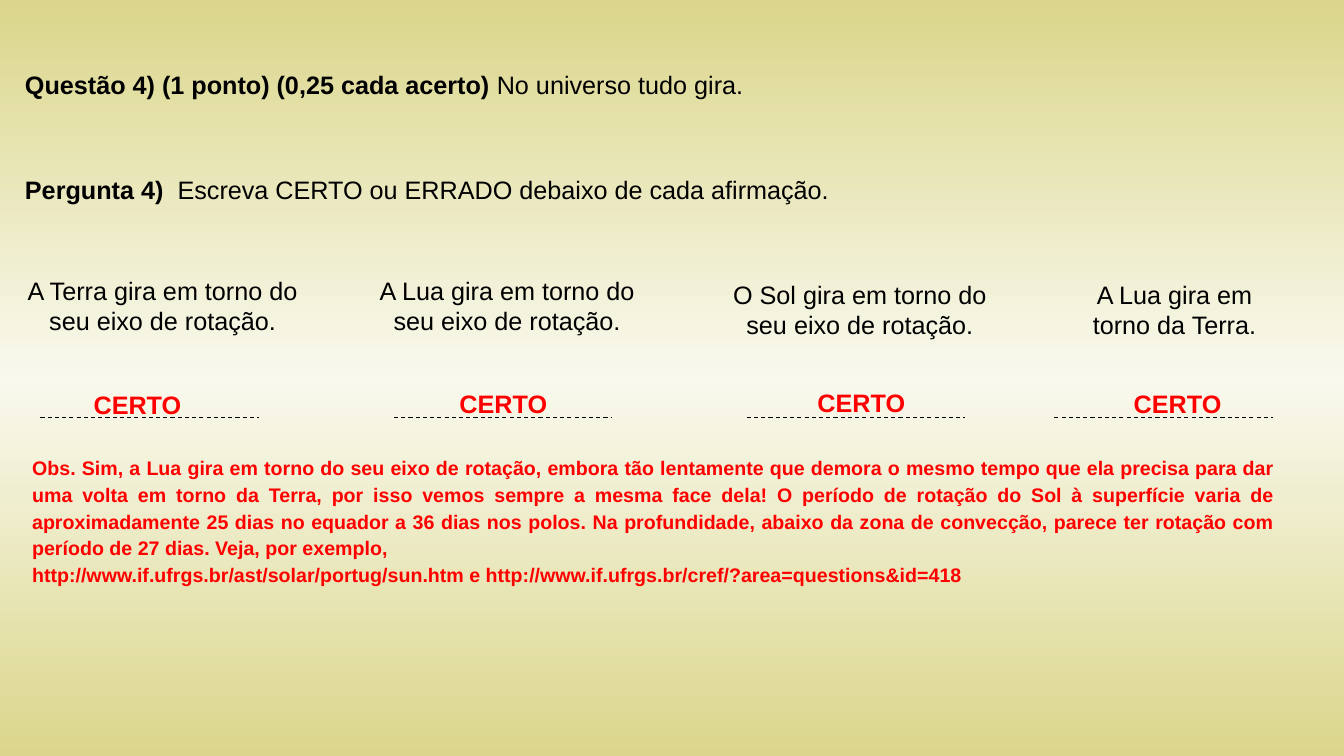
"""Build the answer slide for question 4, on rotation in the universe."""
from copy import deepcopy
from dataclasses import dataclass

from lxml import etree
from pptx import Presentation
from pptx.dml.color import RGBColor
from pptx.enum.dml import MSO_LINE_DASH_STYLE
from pptx.enum.shapes import MSO_CONNECTOR_TYPE
from pptx.enum.text import MSO_AUTO_SIZE, PP_ALIGN
from pptx.oxml.ns import qn
from pptx.slide import Slide
from pptx.util import Cm, Pt

LEFT, CENTER, JUSTIFY = PP_ALIGN.LEFT, PP_ALIGN.CENTER, PP_ALIGN.JUSTIFY
GROW = MSO_AUTO_SIZE.SHAPE_TO_FIT_TEXT
STRAIGHT = MSO_CONNECTOR_TYPE.STRAIGHT
DASH = MSO_LINE_DASH_STYLE.DASH

COLORS = {"text": "000000", "answer": "FF0000", "edge": "DBD68B", "middle": "F9F9EE"}
FONT = "Arial"
LINE_HEIGHT = 1.02
RULE_TOP = 10.52
RULE_LENGTH = 5.5
ANSWER_WIDTH = 2.9


@dataclass
class Span:
    text: str
    bold: bool = False


@dataclass
class Para:
    spans: list[Span]
    align: PP_ALIGN = LEFT


@dataclass
class TextBox:
    left: float
    top: float
    width: float
    height: float
    paras: list[Para]
    color: str = "text"
    size: int = 18
    spacing: float = 1.0


@dataclass
class Statement:
    text: str
    left: float
    top: float
    width: float
    rule_left: float
    answer_left: float
    answer_top: float


HEADINGS = [
    TextBox(0.38, 1.63, 19.02, LINE_HEIGHT, [Para([
        Span("Questão 4) (1 ponto) (0,25 cada acerto) ", True),
        Span("No universo tudo gira."),
    ])]),
    TextBox(0.38, 4.27, 21.18, LINE_HEIGHT, [Para([
        Span("Pergunta 4)", True),
        Span("  Escreva CERTO ou ERRADO debaixo de cada afirmação."),
    ])]),
]

STATEMENTS = [
    Statement("A Terra gira em torno do seu eixo de rotação.", 0.38, 6.81, 7.44, 1.02, 2.11, 9.68),
    Statement("A Lua gira em torno do seu eixo de rotação.", 9.25, 6.81, 7.06, 9.93, 11.33, 9.65),
    Statement("O Sol gira em torno do seu eixo de rotação.", 18.14, 6.91, 7.06, 18.82, 20.35, 9.63),
    Statement("A Lua gira em torno da Terra.", 26.97, 6.91, 5.26, 26.57, 28.32, 9.65),
]

NOTE = TextBox(0.56, 11.28, 31.83, 3.63, [
    Para([Span(
        "Obs. Sim, a Lua gira em torno do seu eixo de rotação, embora tão lentamente que "
        "demora o mesmo tempo que ela precisa para dar uma volta em torno da Terra, por isso "
        "vemos sempre a mesma face dela! O período de rotação do Sol à superfície varia de "
        "aproximadamente 25 dias no equador a 36 dias nos polos. Na profundidade, abaixo da "
        "zona de convecção, parece ter rotação com período de 27 dias. Veja, por exemplo,",
        True)], JUSTIFY),
    Para([Span(
        "http://www.if.ufrgs.br/ast/solar/portug/sun.htm e "
        "http://www.if.ufrgs.br/cref/?area=questions&id=418", True)]),
], "answer", 14, 1.14)


def rgb(name: str) -> RGBColor:
    return RGBColor.from_string(COLORS[name])


def paint_background(page: Slide) -> None:
    fill = page.background.fill
    fill.gradient()
    fill.gradient_angle = 90
    first, last = fill.gradient_stops
    first.position, last.position = 0, 1
    first.color.rgb = rgb("edge")
    last.color.rgb = rgb("edge")
    stops = page.element.find(".//" + qn("a:gsLst"))
    stops.insert(1, deepcopy(stops[0]))
    middle = fill.gradient_stops[1]
    middle.position = 0.5
    middle.color.rgb = rgb("middle")


def add_text(page: Slide, item: TextBox) -> None:
    box = page.shapes.add_textbox(Cm(item.left), Cm(item.top), Cm(item.width), Cm(item.height))
    frame = box.text_frame
    frame.word_wrap = True
    frame.auto_size = GROW
    for index, para in enumerate(item.paras):
        paragraph = frame.add_paragraph() if index else frame.paragraphs[0]
        paragraph.alignment = para.align
        paragraph.line_spacing = item.spacing
        for span in para.spans:
            run = paragraph.add_run()
            run.text = span.text
            run.font.name = FONT
            run.font.size = Pt(item.size)
            run.font.bold = span.bold
            run.font.color.rgb = rgb(item.color)


def add_rule(page: Slide, left: float) -> None:
    rule = page.shapes.add_connector(
        STRAIGHT, Cm(left), Cm(RULE_TOP), Cm(left + RULE_LENGTH), Cm(RULE_TOP))
    rule.line.color.rgb = rgb("text")
    rule.line.width = Pt(0.75)
    rule.line.dash_style = DASH
    etree.SubElement(rule.element.spPr, qn("a:effectLst"))


def add_statement(page: Slide, item: Statement) -> None:
    add_text(page, TextBox(item.left, item.top, item.width, 1.8,
                           [Para([Span(item.text)], CENTER)]))
    add_rule(page, item.rule_left)
    add_text(page, TextBox(item.answer_left, item.answer_top, ANSWER_WIDTH, LINE_HEIGHT,
                           [Para([Span("CERTO", True)])], "answer"))


def main() -> None:
    deck = Presentation()
    deck.slide_width, deck.slide_height = Cm(33.87), Cm(19.05)
    page = deck.slides.add_slide(deck.slide_layouts[6])
    paint_background(page)
    for heading in HEADINGS:
        add_text(page, heading)
    for statement in STATEMENTS:
        add_statement(page, statement)
    add_text(page, NOTE)
    deck.save("out.pptx")


if __name__ == "__main__":
    main()
